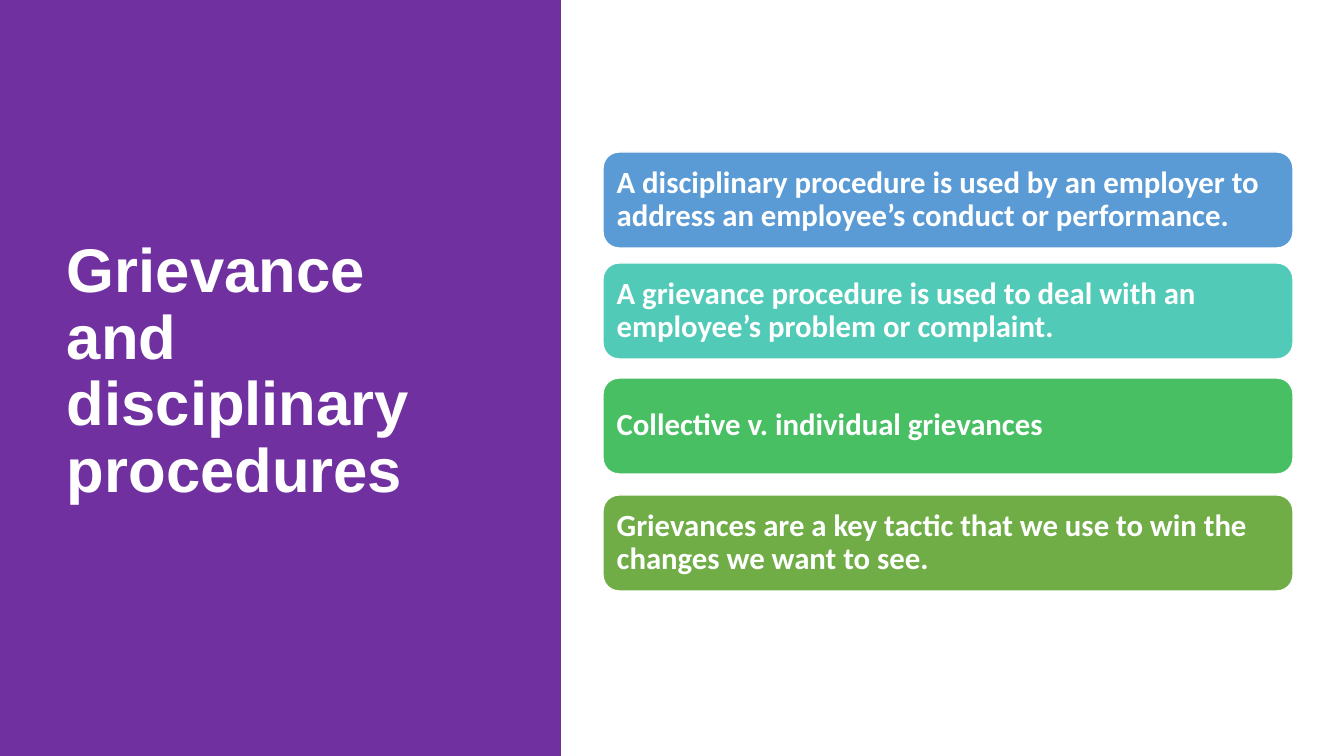
from pptx import Presentation
from pptx import util as u
from pptx.dml.color import RGBColor
from pptx.enum import shapes, text

# Content
HEADING = "Grievance and disciplinary procedures"
POINTS = [  # top in px, colour, wording
    (152, "blue", "A disciplinary procedure is used by an employer to address "
                  "an employee’s conduct or performance."),
    (263, "teal", "A grievance procedure is used to deal with an employee’s "
                  "problem or complaint."),
    (378, "green", "Collective v. individual grievances"),
    (495, "olive", "Grievances are a key tactic that we use to win the changes "
                   "we want to see."),
]
COLOURS = {
    "purple": "7030A0", "white": "FFFFFF", "blue": "5B9BD5",
    "teal": "52CAB8", "green": "49BF64", "olive": "70AD47",
}

# Layout in px
SLIDE_W, SLIDE_H = 1344, 756
PANEL_W = 561
HEADING_BOX = (57, 69, 419, 607)
CARD_LEFT, CARD_W, CARD_H = 603, 690, 96
EMU_PER_PX = 914400 / 100.8


def px(length):
    return u.Emu(round(length * EMU_PER_PX))


def colour(name):
    return RGBColor.from_string(COLOURS[name])


def add_block(slide, kind, box, fill):
    block = slide.shapes.add_shape(kind, *map(px, box))
    block.shadow.inherit = False
    block.fill.solid()
    block.fill.fore_color.rgb = colour(fill)
    block.line.fill.background()
    return block


def write(holder, wording, font_name, size, inset_x, inset_y):
    frame = holder.text_frame
    frame.word_wrap = True
    frame.vertical_anchor = text.MSO_ANCHOR.MIDDLE
    frame.margin_left = frame.margin_right = px(inset_x)
    frame.margin_top = frame.margin_bottom = px(inset_y)
    paragraph = frame.paragraphs[0]
    paragraph.text = wording
    paragraph.alignment = text.PP_ALIGN.LEFT
    paragraph.line_spacing = 0.9
    paragraph.font.name = font_name
    paragraph.font.size = u.Pt(size)
    paragraph.font.bold = True
    paragraph.font.color.rgb = colour("white")


def main():
    deck = Presentation()
    deck.slide_width, deck.slide_height = px(SLIDE_W), px(SLIDE_H)
    slide = deck.slides.add_slide(deck.slide_layouts[6])

    # Purple panel with the heading
    add_block(slide, shapes.MSO_SHAPE.RECTANGLE,
              (0, 0, PANEL_W, SLIDE_H), "purple")
    heading = slide.shapes.add_textbox(*map(px, HEADING_BOX))
    write(heading, HEADING, "Arial", 44, 10, 5)

    # One rounded card per point
    for top, fill, wording in POINTS:
        card = add_block(slide, shapes.MSO_SHAPE.ROUNDED_RECTANGLE,
                         (CARD_LEFT, top, CARD_W, CARD_H), fill)
        card.line.color.rgb = colour("white")
        card.line.width = u.Pt(1)
        write(card, wording, "Calibri", 22, 9, 9)

    deck.save("out.pptx")


if __name__ == "__main__":
    main()
